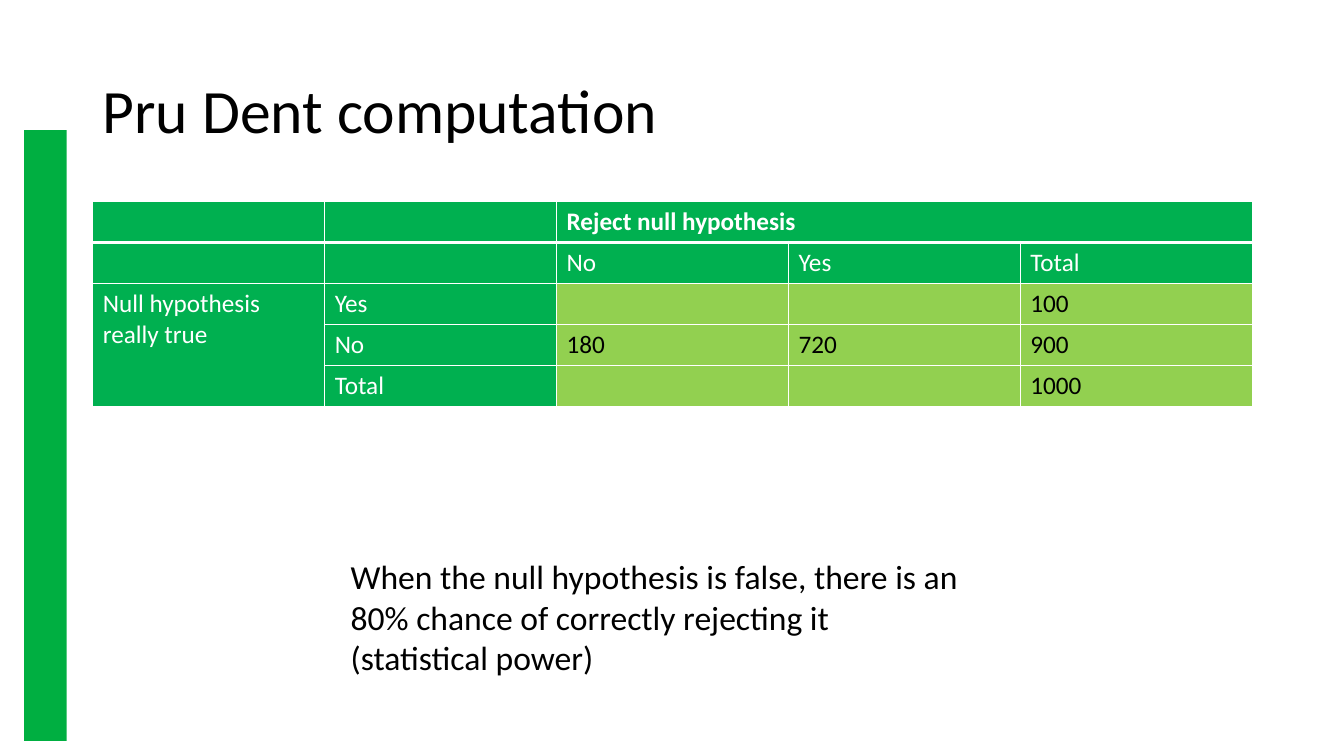
from lxml import etree
from pptx import Presentation
from pptx import util as u
from pptx.dml.color import RGBColor
from pptx.enum import shapes, text
from pptx.oxml import ns

PX = 9144  # EMU, 100 px to the inch
WHITE, BLACK = "FFFFFF", "000000"
BAR_GREEN, HEAD_GREEN, BODY_GREEN = "00AF41", "00B050", "92D050"
ROWS = [
    ["", "", "Reject null hypothesis", "", ""],
    ["", "", "No", "Yes", "Total"],
    ["Null hypothesis really true", "Yes", "", "", "100"],
    ["", "No", "180", "720", "900"],
    ["", "Total", "", "", "1000"],
]
HEAD_ROWS, HEAD_COLS = 2, 2


def color(value):
    return RGBColor.from_string(value)


def emu(box):
    return [length * PX for length in box]


def paint(shape, fill):
    shape.shadow.inherit = False
    shape.fill.solid()
    shape.fill.fore_color.rgb = color(fill)
    shape.line.fill.background()


def write(frame, words, size, ink, bold=False):
    paragraph = frame.paragraphs[0]
    paragraph.alignment = text.PP_ALIGN.LEFT
    run = paragraph.add_run()
    run.text = words
    run.font.name = "Calibri"
    run.font.size = u.Pt(size)
    run.font.bold = bold
    run.font.color.rgb = color(ink)
    return paragraph


def add_side_bar(slide, box):
    bar = slide.shapes.add_shape(shapes.MSO_SHAPE.RECTANGLE, *emu(box))
    paint(bar, BAR_GREEN)


def add_title(slide, box):
    frame = slide.shapes.add_textbox(*emu(box)).text_frame
    frame.word_wrap = True
    frame.vertical_anchor = text.MSO_ANCHOR.MIDDLE
    write(frame, "Pru Dent computation", 44, BLACK).line_spacing = 0.9


def add_borders(cell, widths):
    """Draw white borders; widths are points keyed by side, in schema order."""
    properties = cell._tc.get_or_add_tcPr()
    for place, (side, width) in enumerate(widths.items()):
        line = etree.Element(ns.qn(f"a:ln{side}"), w=str(u.Pt(width)))
        solid = etree.SubElement(line, ns.qn("a:solidFill"))
        etree.SubElement(solid, ns.qn("a:srgbClr"), val=WHITE)
        properties.insert(place, line)


def add_hypothesis_table(slide, box):
    frame = slide.shapes.add_table(len(ROWS), len(ROWS[0]), *emu(box))
    table = frame.table
    table.horz_banding = False
    for row in table.rows:
        row.height = box[3] * PX // len(ROWS)
    for r, row in enumerate(ROWS):
        for c, words in enumerate(row):
            cell = table.cell(r, c)
            is_head = r < HEAD_ROWS or c < HEAD_COLS
            cell.fill.solid()
            cell.fill.fore_color.rgb = color(HEAD_GREEN if is_head else BODY_GREEN)
            add_borders(cell, {"L": 1, "R": 1, "T": 3 if r == 1 else 1,
                               "B": 3 if r == 0 else 1})
            if words:
                write(cell.text_frame, words, 18, WHITE if is_head else BLACK, r == 0)
    table.cell(0, 2).merge(table.cell(0, 4))
    table.cell(2, 0).merge(table.cell(4, 0))


def add_power_note(slide, box):
    note = slide.shapes.add_shape(shapes.MSO_SHAPE.RECTANGLE, *emu(box))
    paint(note, WHITE)
    frame = note.text_frame
    frame.word_wrap = True
    frame.vertical_anchor = text.MSO_ANCHOR.TOP
    write(frame, "When the null hypothesis is false, there is an 80% chance of "
                 "correctly rejecting it (statistical power)", 24, BLACK)


def main():
    deck = Presentation()
    deck.slide_width, deck.slide_height = emu((1333, 750))
    slide = deck.slides.add_slide(deck.slide_layouts[6])
    add_side_bar(slide, (24, 129, 42, 606))
    add_title(slide, (92, 40, 1150, 145))
    add_hypothesis_table(slide, (92, 200, 1150, 203))
    add_power_note(slide, (338, 547, 627, 131))
    deck.save("out.pptx")


if __name__ == "__main__":
    main()
